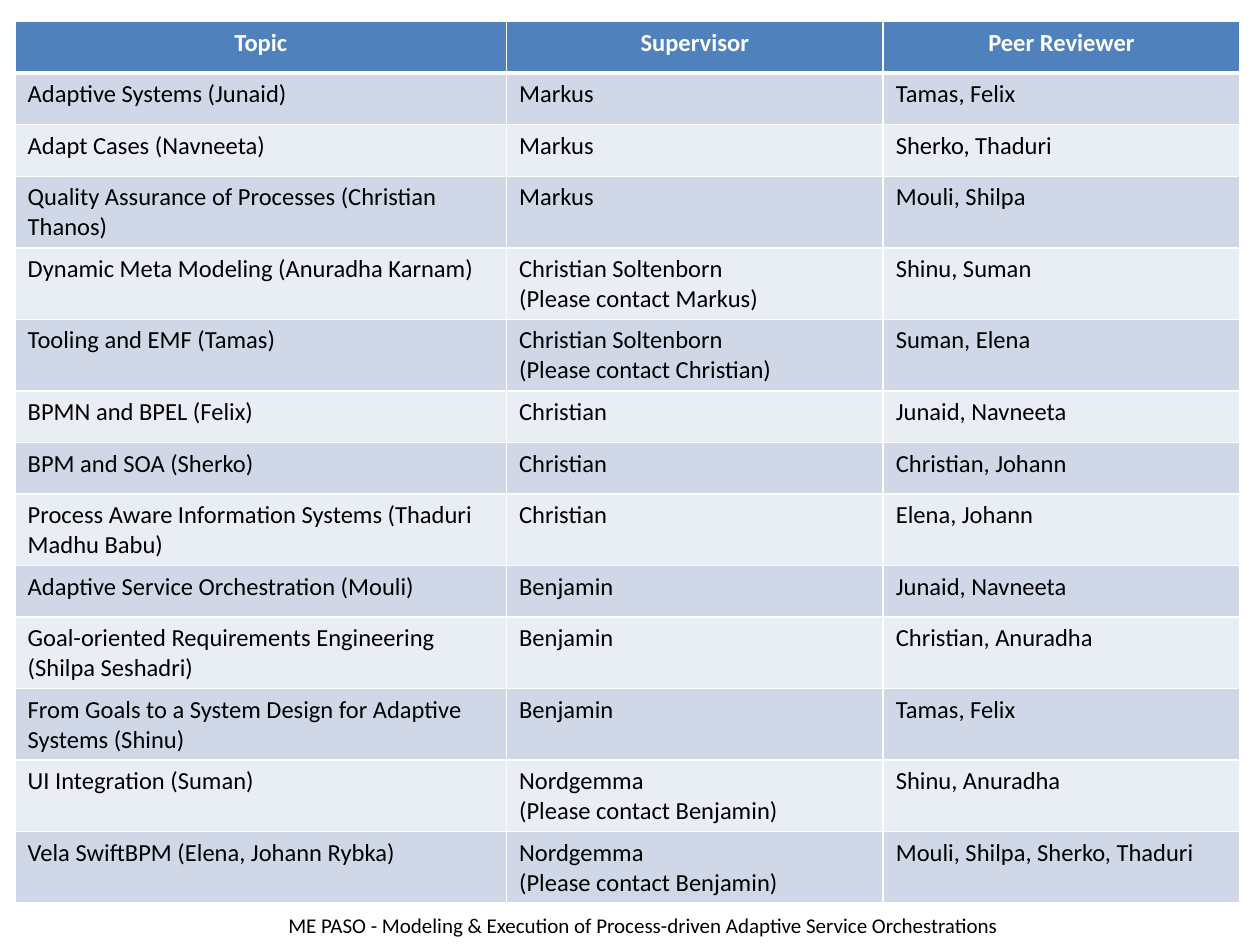
from copy import deepcopy

from pptx import Presentation
from pptx.dml.color import RGBColor
from pptx.enum.text import MSO_ANCHOR as Anchor, PP_ALIGN as Align
from pptx.oxml import parse_xml
from pptx.oxml.ns import nsdecls, qn
from pptx.util import Inches, Pt

HEADER_FILL, BANDS = "4F81BD", ("D0D8E8", "E9EDF4")
WHITE, BLACK = "FFFFFF", "000000"
COLUMNS = (3.9, 2.99, 2.83)
ROW = 0.41

ROWS = [
    ("Topic", "Supervisor", "Peer Reviewer"),
    ("Adaptive Systems (Junaid)", "Markus", "Tamas, Felix"),
    ("Adapt Cases (Navneeta)", "Markus", "Sherko, Thaduri"),
    ("Quality Assurance of Processes (Christian Thanos)", "Markus", "Mouli, Shilpa"),
    ("Dynamic Meta Modeling (Anuradha Karnam)",
     "Christian Soltenborn\n(Please contact Markus)", "Shinu, Suman"),
    ("Tooling and EMF (Tamas)",
     "Christian Soltenborn\n(Please contact Christian)", "Suman, Elena"),
    ("BPMN and BPEL (Felix)", "Christian", "Junaid, Navneeta"),
    ("BPM and SOA (Sherko)", "Christian", "Christian, Johann"),
    ("Process Aware Information Systems (Thaduri Madhu Babu)",
     "Christian", "Elena, Johann"),
    ("Adaptive Service Orchestration (Mouli)", "Benjamin", "Junaid, Navneeta"),
    ("Goal-oriented Requirements Engineering (Shilpa Seshadri)",
     "Benjamin", "Christian, Anuradha"),
    ("From Goals to a System Design for Adaptive Systems (Shinu)",
     "Benjamin", "Tamas, Felix"),
    ("UI Integration (Suman)",
     "Nordgemma\n(Please contact Benjamin)", "Shinu, Anuradha"),
    ("Vela SwiftBPM (Elena, Johann Rybka)",
     "Nordgemma\n(Please contact Benjamin)", "Mouli, Shilpa, Sherko, Thaduri"),
]


def write(frame, text, size, color, bold=False, align=Align.LEFT):
    """Fill the first paragraph; a newline becomes a line break of the same size."""
    para = frame.paragraphs[0]
    para.text = text
    para.alignment = align
    for span in para.runs:
        for name, value in {"name": "Calibri", "size": Pt(size), "bold": bold}.items():
            setattr(span.font, name, value)
        span.font.color.rgb = RGBColor.from_string(color)
    for line_break in para._p.findall(qn("a:br")):
        line_break.append(deepcopy(para.runs[0]._r.rPr))


def add_borders(cell, bottom):
    """Put white lines around a cell, ahead of its fill as the schema asks."""
    widths = {"lnL": 1, "lnR": 1, "lnT": 1, "lnB": bottom}
    for place, (side, width) in enumerate(widths.items()):
        cell._tc.get_or_add_tcPr().insert(place, parse_xml(
            f'<a:{side} {nsdecls("a")} w="{Pt(width)}"><a:solidFill>'
            f'<a:srgbClr val="{WHITE}"/></a:solidFill></a:{side}>'))


deck = Presentation()
deck.slide_width, deck.slide_height = Inches(10), Inches(7.5)
page = deck.slides.add_slide(deck.slide_layouts[6])

footer = page.shapes.add_textbox(Inches(1.52), Inches(7.14), Inches(7.17), Inches(0.4))
footer.text_frame.word_wrap = True
footer.text_frame.vertical_anchor = Anchor.MIDDLE
write(footer.text_frame,
      "ME PASO - Modeling & Execution of Process-driven Adaptive Service Orchestrations",
      12, BLACK, align=Align.CENTER)

table_height = Inches(6.97)
holder = page.shapes.add_table(len(ROWS), len(COLUMNS), Inches(0.12), Inches(0.17),
                               Inches(sum(COLUMNS)), table_height)
table = holder.table
for column, width in zip(table.columns, COLUMNS):
    column.width = Inches(width)

for r, texts in enumerate(ROWS):
    header = r == 0
    table.rows[r].height = Inches(ROW)
    for c, text in enumerate(texts):
        cell = table.cell(r, c)
        cell.fill.solid()
        cell.fill.fore_color.rgb = RGBColor.from_string(
            HEADER_FILL if header else BANDS[(r - 1) % 2])
        add_borders(cell, 3 if header else 1)
        write(cell.text_frame, text, 14, WHITE if header else BLACK, header,
              Align.CENTER if header else Align.LEFT)
holder.height = table_height  # two-line rows grow beyond the base row height

deck.save("out.pptx")
